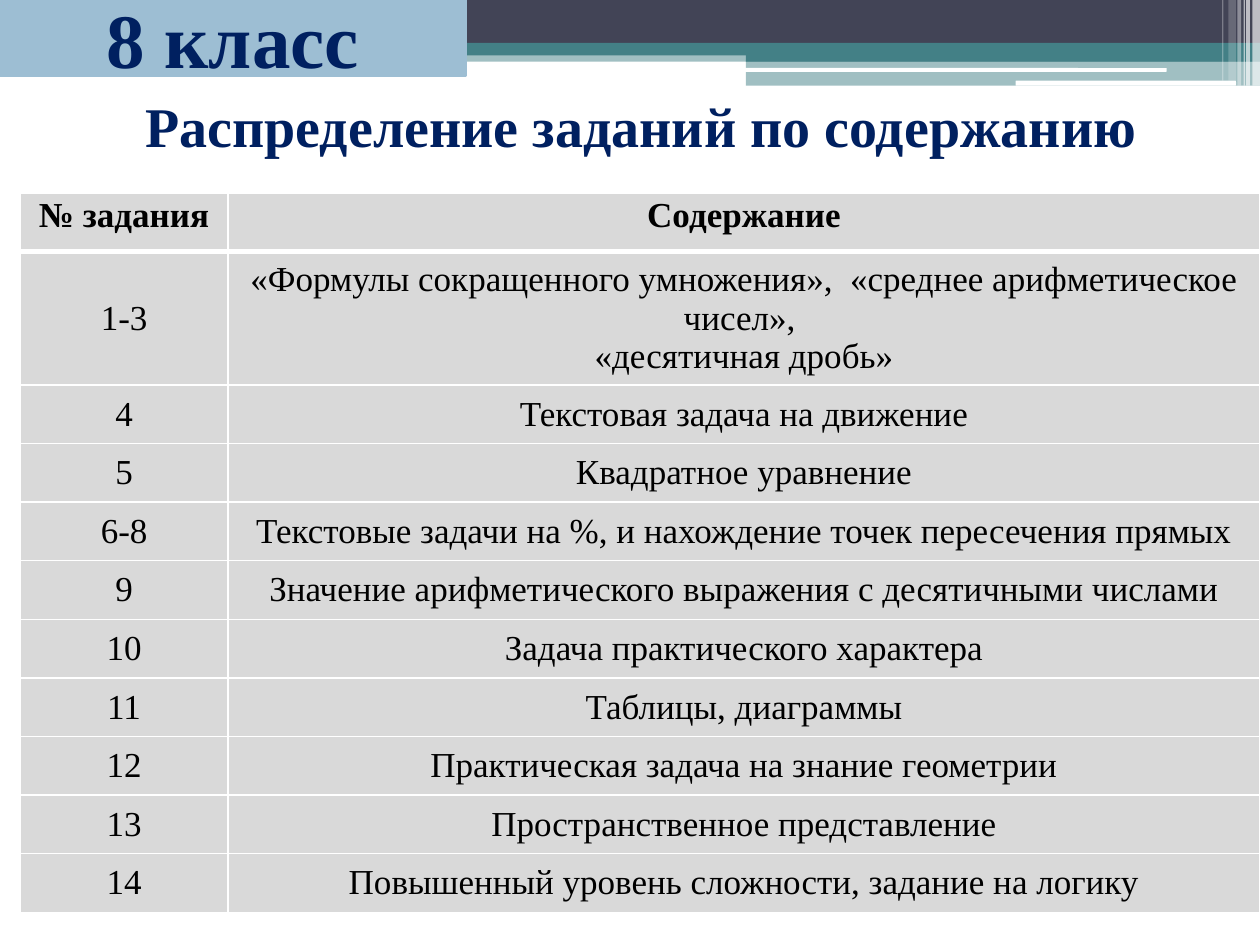
from lxml import etree
from pptx import Presentation
from pptx.dml.color import RGBColor
from pptx.enum.shapes import MSO_SHAPE
from pptx.enum.text import MSO_ANCHOR, PP_ALIGN
from pptx.oxml.ns import qn
from pptx.util import Inches, Pt

RECT, ROUNDED = MSO_SHAPE.RECTANGLE, MSO_SHAPE.ROUNDED_RECTANGLE
CENTER = PP_ALIGN.CENTER
TOP, MIDDLE = MSO_ANCHOR.TOP, MSO_ANCHOR.MIDDLE

FONT = "Times New Roman"
WHITE = RGBColor(0xFF, 0xFF, 0xFF)
BLACK = RGBColor(0, 0, 0)
NAVY = RGBColor(0x00, 0x20, 0x60)
SLATE = RGBColor(0x42, 0x44, 0x56)
TEAL = RGBColor(0x43, 0x80, 0x86)
SKY = RGBColor(0x9D, 0xBE, 0xD3)
GREY = RGBColor(0xD9, 0xD9, 0xD9)

# left, top, width, height, colour, opacity in percent
BANDS = [
    (0, 0.4, 10, 0.09, TEAL, 50),
    (0, 0, 10, 0.34, SLATE, 100),
    (0, 0.34, 10, 0.1, TEAL, 100),
    (5.92, 0.39, 4.08, 0.1, TEAL, 100),
    (5.92, 0.48, 4.08, 0.2, TEAL, 50),
]
WHITE_BARS = [(5.91, 0.54, 3.35, 0.03), (8.06, 0.64, 1.75, 0.04)]
# left, width, height, opacity in percent
STRIPES = [
    (9.94, 0.06, 0.68, 65),
    (9.89, 0.03, 0.68, 65),
    (9.87, 0.01, 0.68, 60),
    (9.82, 0.03, 0.68, 40),
    (9.75, 0.06, 0.64, 20),
    (9.7, 0.01, 0.64, 30),
]

# Each cell is a list of paragraphs
ROWS = [
    (["№ задания"], ["Содержание"]),
    (["1-3"], ["«Формулы сокращенного умножения»,  «среднее арифметическое чисел», ",
               "«десятичная дробь»"]),
    (["4"], ["Текстовая задача на движение"]),
    (["5"], ["Квадратное уравнение"]),
    (["6-8"], ["Текстовые задачи на %, и нахождение точек пересечения прямых"]),
    (["9"], ["Значение арифметического выражения с десятичными числами"]),
    (["10"], ["Задача практического характера"]),
    (["11"], ["Таблицы, диаграммы"]),
    (["12"], ["Практическая задача на знание геометрии"]),
    (["13"], ["Пространственное представление"]),
    (["14"], ["Повышенный уровень сложности, задание на логику"]),
]
COL_WIDTHS = (1.65, 8.19)
ROW_HEIGHT, TALL_ROW_HEIGHT = 0.465, 1.02


def write(tf, paragraphs, size, color, bold):
    for i, text in enumerate(paragraphs):
        p = tf.paragraphs[0] if i == 0 else tf.add_paragraph()
        p.alignment = CENTER
        r = p.add_run()
        r.text = text
        r.font.name = FONT
        r.font.size = Pt(size)
        r.font.bold = bold
        r.font.color.rgb = color


def add_block(slide, kind, box, color, opacity=100):
    sp = slide.shapes.add_shape(kind, *map(Inches, box))
    sp.shadow.inherit = False
    sp.fill.solid()
    sp.fill.fore_color.rgb = color
    sp.line.fill.background()
    if opacity < 100:
        clr = sp.fill._xPr.find(".//" + qn("a:srgbClr"))
        etree.SubElement(clr, qn("a:alpha"), val=str(opacity * 1000))
    return sp


def add_banner(slide):
    for *box, color, opacity in BANDS:
        add_block(slide, RECT, box, color, opacity)
    for box in WHITE_BARS:
        add_block(slide, ROUNDED, box, WHITE)
    for left, width, height, opacity in STRIPES:
        add_block(slide, RECT, (left, 0, width, height), WHITE, opacity)


def add_title(slide, text):
    tf = slide.shapes.add_textbox(*map(Inches, (0.59, 0.68, 9, 0.63))).text_frame
    tf.word_wrap = True
    tf.vertical_anchor = MIDDLE
    write(tf, [text], 32, NAVY, True)


def add_class_label(slide, text):
    sp = add_block(slide, RECT, (0, 0, 3.7, 0.6), SKY)
    sp.line.color.rgb = SKY
    sp.line.width = Pt(1.5)
    sp.text_frame.vertical_anchor = MIDDLE
    write(sp.text_frame, [text], 44, NAVY, True)


def set_borders(cell, widths):
    tc_pr = cell._tc.get_or_add_tcPr()
    for i, (side, width) in enumerate(widths.items()):
        ln = etree.Element(qn("a:" + side), w=str(Pt(width)))
        fill = etree.SubElement(ln, qn("a:solidFill"))
        etree.SubElement(fill, qn("a:srgbClr"), val=str(WHITE))
        tc_pr.insert(i, ln)


def add_task_table(slide):
    heights = [ROW_HEIGHT] * len(ROWS)
    heights[1] = TALL_ROW_HEIGHT
    box = (0.16, 1.53, sum(COL_WIDTHS), sum(heights))
    table = slide.shapes.add_table(len(ROWS), 2, *map(Inches, box)).table
    for col, width in zip(table.columns, COL_WIDTHS):
        col.width = Inches(width)
    for i, (row, height) in enumerate(zip(table.rows, heights)):
        row.height = Inches(height)
        header = i == 0
        for cell, paragraphs in zip(row.cells, ROWS[i]):
            cell.fill.solid()
            cell.fill.fore_color.rgb = GREY
            cell.vertical_anchor = TOP if header else MIDDLE
            cell.margin_top = cell.margin_bottom = Inches(0.03)
            write(cell.text_frame, paragraphs, 20, BLACK, header)
            # The rule under the header is thicker
            set_borders(cell, {"lnL": 1, "lnR": 1, "lnT": 3 if i == 1 else 1,
                               "lnB": 3 if header else 1})


def main():
    prs = Presentation()
    prs.slide_width, prs.slide_height = Inches(10), Inches(7.5)
    slide = prs.slides.add_slide(prs.slide_layouts[6])
    add_banner(slide)
    add_title(slide, "Распределение заданий по содержанию")
    add_class_label(slide, "8 класс")
    add_task_table(slide)
    prs.save("out.pptx")


if __name__ == "__main__":
    main()
